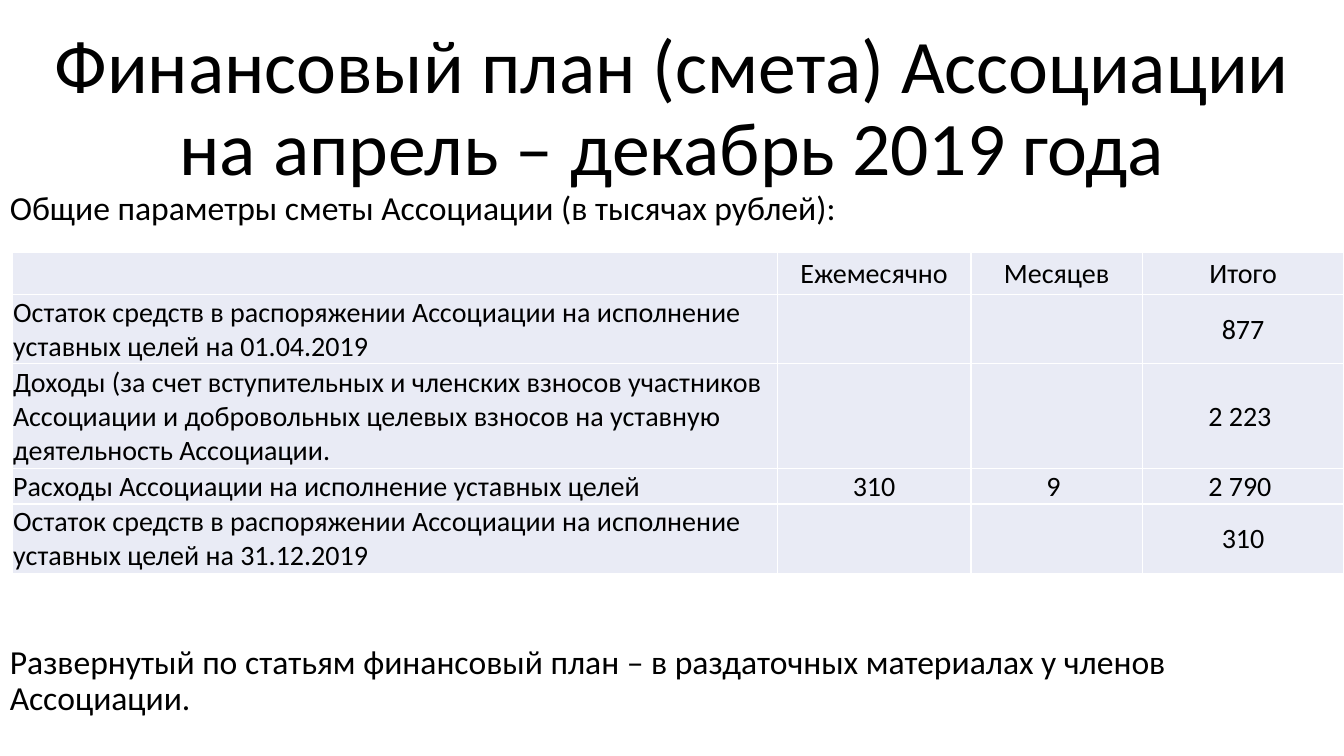
from dataclasses import dataclass

from lxml.etree import SubElement
from pptx import Presentation
from pptx.dml.color import RGBColor
from pptx.enum.text import MSO_ANCHOR, MSO_AUTO_SIZE, PP_ALIGN
from pptx.oxml.ns import qn
from pptx.util import Inches, Pt

FONT = "Calibri"
BLACK, WHITE, PALE_BLUE = "000000", "FFFFFF", "E9EBF5"
SLIDE_WIDTH, SLIDE_HEIGHT = 13.33, 7.5
COLUMN_WIDTHS = (7.59, 1.92, 1.7, 2)


@dataclass
class BudgetRow:
    height: float
    item: str
    monthly: str
    months: str
    total: str


@dataclass
class Note:
    top: float
    height: float
    text: str


BUDGET = [
    BudgetRow(0.42, "", "Ежемесячно", "Месяцев", "Итого"),
    BudgetRow(0.69, "Остаток средств в распоряжении Ассоциации на исполнение "
              "уставных целей на 01.04.2019", "", "", "877"),
    BudgetRow(1.04, "Доходы (за счет вступительных и членских взносов участников "
              "Ассоциации и добровольных целевых взносов на уставную "
              "деятельность Ассоциации.", "", "", "2 223 "),
    BudgetRow(0.35, "Расходы Ассоциации на исполнение уставных целей",
              "310", "9 ", "2 790 "),
    BudgetRow(0.69, "Остаток средств в распоряжении Ассоциации на исполнение "
              "уставных целей на 31.12.2019", "", "", "310"),
]

NOTES = [
    Note(1.85, 0.5, "Общие параметры сметы Ассоциации (в тысячах рублей):"),
    Note(6.35, 0.9, "Развернутый по статьям финансовый план – в раздаточных "
         "материалах у членов Ассоциации."),
]


def rgb(value: str) -> RGBColor:
    return RGBColor.from_string(value)


def write(frame, text: str, size: float, align: PP_ALIGN, spacing: float) -> None:
    frame.text = text
    paragraph = frame.paragraphs[0]
    paragraph.alignment = align
    paragraph.line_spacing = spacing
    paragraph.font.size = Pt(size)
    for run in paragraph.runs:
        run.font.name = FONT
        run.font.size = Pt(size)
        run.font.color.rgb = rgb(BLACK)


def place_title(slide, text: str) -> None:
    title = slide.shapes.title
    title.left, title.top = Inches(0), Inches(0)
    title.width, title.height = Inches(SLIDE_WIDTH), Inches(1.95)
    frame = title.text_frame
    write(frame, text, 54, PP_ALIGN.CENTER, 0.9)
    frame.word_wrap = True
    frame.auto_size = MSO_AUTO_SIZE.NONE
    frame.vertical_anchor = MSO_ANCHOR.BOTTOM


def add_note(slide, note: Note) -> None:
    box = slide.shapes.add_textbox(
        Inches(0), Inches(note.top), Inches(SLIDE_WIDTH), Inches(note.height))
    box.text_frame.word_wrap = True
    write(box.text_frame, note.text, 24, PP_ALIGN.LEFT, 0.9)


def add_borders(cell, color: str) -> None:
    properties = cell._tc.get_or_add_tcPr()
    for index, side in enumerate(("a:lnL", "a:lnR", "a:lnT", "a:lnB")):
        line = SubElement(properties, qn(side), w=str(Pt(1)))
        fill = SubElement(line, qn("a:solidFill"))
        SubElement(fill, qn("a:srgbClr"), val=color)
        properties.insert(index, line)


def format_cell(cell, text: str, align: PP_ALIGN) -> None:
    write(cell.text_frame, text, 20, align, 1.0)
    cell.vertical_anchor = MSO_ANCHOR.MIDDLE
    cell.margin_left = cell.margin_right = cell.margin_top = Inches(0.01)
    cell.margin_bottom = Inches(0)
    cell.fill.solid()
    cell.fill.fore_color.rgb = rgb(PALE_BLUE)
    add_borders(cell, WHITE)


def add_budget(slide, rows: list[BudgetRow]) -> None:
    budget = slide.shapes.add_table(
        len(rows), len(COLUMN_WIDTHS), Inches(0.12), Inches(2.5),
        Inches(sum(COLUMN_WIDTHS)), Inches(sum(row.height for row in rows))).table
    budget.first_row = budget.horz_banding = False
    for column, width in zip(budget.columns, COLUMN_WIDTHS):
        column.width = Inches(width)
    for line, row in zip(budget.rows, rows):
        line.height = Inches(row.height)
        texts = (row.item, row.monthly, row.months, row.total)
        for index, (cell, text) in enumerate(zip(line.cells, texts)):
            format_cell(cell, text, PP_ALIGN.CENTER if index else PP_ALIGN.LEFT)


def main() -> None:
    deck = Presentation()
    deck.slide_width, deck.slide_height = Inches(SLIDE_WIDTH), Inches(SLIDE_HEIGHT)
    slide = deck.slides.add_slide(deck.slide_layouts.get_by_name("Title Only"))
    place_title(slide, "Финансовый план (смета) Ассоциации на апрель – декабрь 2019 года")
    for note in NOTES:
        add_note(slide, note)
    add_budget(slide, BUDGET)
    deck.save("out.pptx")


if __name__ == "__main__":
    main()
